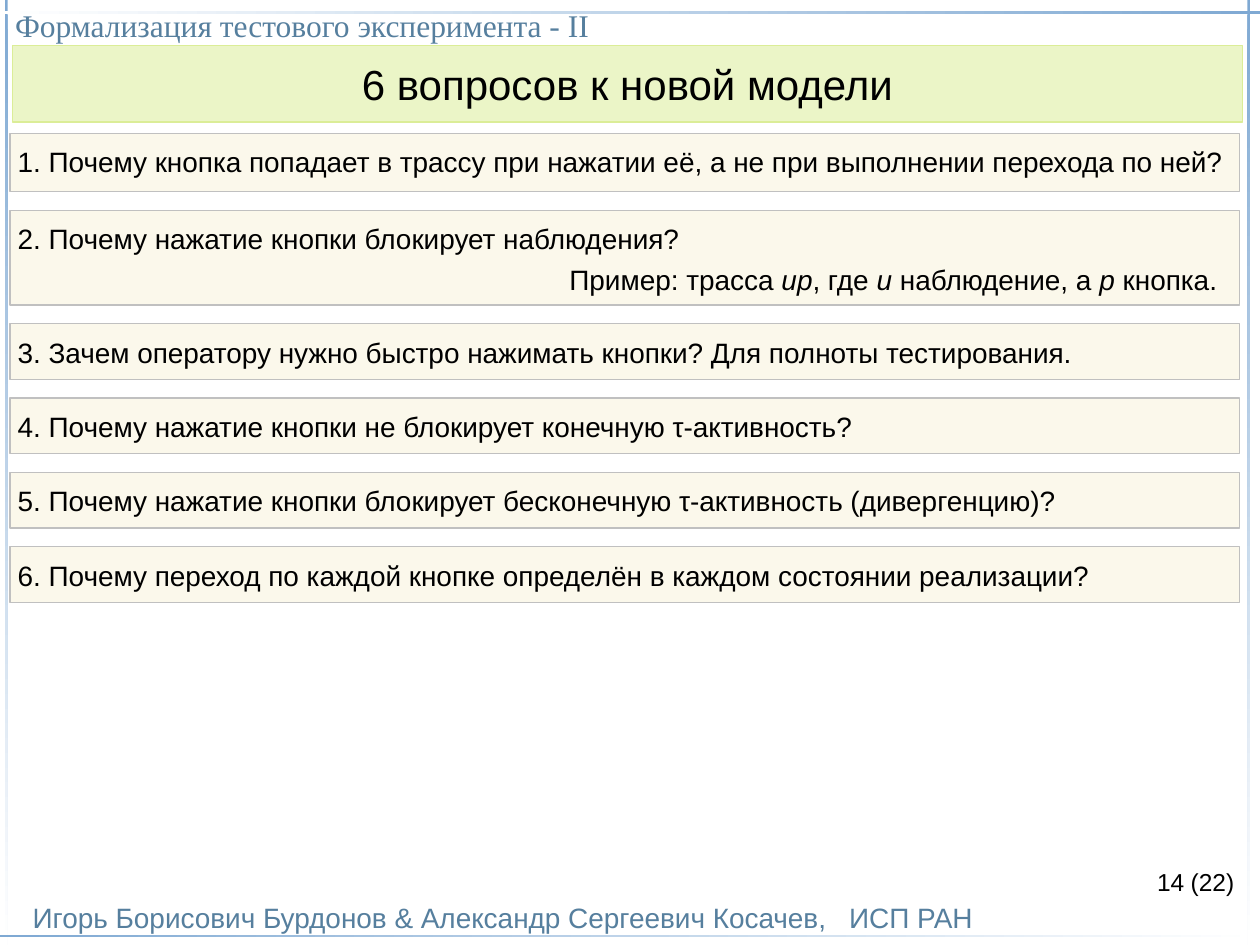
from dataclasses import dataclass

from lxml import etree
from pptx import Presentation
from pptx.dml.color import RGBColor
from pptx.enum.shapes import MSO_SHAPE
from pptx.enum.text import MSO_ANCHOR, PP_ALIGN
from pptx.oxml.ns import qn
from pptx.util import Inches, Pt

RECTANGLE = MSO_SHAPE.RECTANGLE
TOP, MIDDLE, BOTTOM = MSO_ANCHOR.TOP, MSO_ANCHOR.MIDDLE, MSO_ANCHOR.BOTTOM
LEFT, CENTER, RIGHT = PP_ALIGN.LEFT, PP_ALIGN.CENTER, PP_ALIGN.RIGHT

COLORS = {
    "rule": "7FA9D3",
    "white": "FFFFFF",
    "caption": "567F9E",
    "text": "000000",
    "title_fill": "EBF5C7",
    "title_line": "DBED97",
    "question_fill": "FBF8EB",
    "question_line": "C0C0C0",
}
SLIDE_WIDTH, SLIDE_HEIGHT = 10, 7.5
RULE_THICKNESS = 0.02
QUESTION_LEFT, QUESTION_TOP, QUESTION_WIDTH = 0.08, 1.06, 9.76
QUESTION_GAP = 0.15
HANGING_INDENT = 0.33


@dataclass(frozen=True)
class Box:
    left: float
    top: float
    width: float
    height: float


@dataclass(frozen=True)
class Rule:
    box: Box
    angle: int  # counter-clockwise direction of the fade to white


@dataclass(frozen=True)
class Label:
    text: str
    box: Box
    size: int
    color: str = "text"
    font: str = "Arial"
    align: PP_ALIGN = LEFT
    anchor: MSO_ANCHOR = TOP
    tab: float | None = None


@dataclass(frozen=True)
class Question:
    text: str
    height: float = 0.44
    example: tuple[tuple[str, bool], ...] = ()  # (text, italic)
    right_inset: float = 0.06


RULES = [
    Rule(Box(0.04, 0, RULE_THICKNESS, SLIDE_HEIGHT), 270),
    Rule(Box(0, 0.09, SLIDE_WIDTH, RULE_THICKNESS), 180),
    Rule(Box(0, 7.42, SLIDE_WIDTH, RULE_THICKNESS), 0),
    Rule(Box(9.9, 0, RULE_THICKNESS, SLIDE_HEIGHT), 270),
]
LABELS = [
    Label("Игорь Борисович Бурдонов & Александр Сергеевич Косачев,\tИСП РАН",
          Box(0.26, 7.14, 8, 0.27), 16, "caption", anchor=BOTTOM, tab=6.48),
    Label("Формализация тестового эксперимента - II",
          Box(0.12, 0.05, 9.73, 0.3), 18, "caption", "Times New Roman"),
    Label("14", Box(8.9, 6.88, 0.5, 0.24), 14, align=RIGHT),
    Label("(22)", Box(9.45, 6.88, 0.5, 0.24), 14),
]
QUESTIONS = [
    Question("1. Почему кнопка попадает в трассу при нажатии её, "
             "а не при выполнении перехода по ней?", 0.46),
    Question("2. Почему нажатие кнопки блокирует наблюдения?", 0.75,
             (("Пример: трасса ", False), ("up", True), (", где ", False),
              ("u", True), (" наблюдение, а ", False), ("p", True),
              (" кнопка.", False)), 0.18),
    Question("3. Зачем оператору нужно быстро нажимать кнопки? Для полноты тестирования."),
    Question("4. Почему нажатие кнопки не блокирует конечную τ-активность?"),
    Question("5. Почему нажатие кнопки блокирует бесконечную τ-активность (дивергенцию)?"),
    Question("6. Почему переход по каждой кнопке определён в каждом состоянии реализации?"),
]


def rgb(name: str) -> RGBColor:
    return RGBColor.from_string(COLORS[name])


def place(box: Box) -> tuple:
    return tuple(Inches(v) for v in (box.left, box.top, box.width, box.height))


def set_frame(frame, insets: tuple, anchor: MSO_ANCHOR) -> None:
    """Insets run left, top, right, bottom."""
    frame.word_wrap = True
    frame.vertical_anchor = anchor
    (frame.margin_left, frame.margin_top,
     frame.margin_right, frame.margin_bottom) = (Inches(v) for v in insets)


def style(paragraph, size: int, color: str = "text", font: str = "Arial",
          align: PP_ALIGN = LEFT) -> None:
    paragraph.alignment = align
    paragraph.font.size = Pt(size)
    paragraph.font.name = font
    paragraph.font.color.rgb = rgb(color)


def add_rule(slide, rule: Rule) -> None:
    bar = slide.shapes.add_shape(RECTANGLE, *place(rule.box))
    bar.shadow.inherit = False
    bar.line.fill.background()
    bar.fill.gradient()
    bar.fill.gradient_angle = rule.angle
    for stop, color in zip(bar.fill.gradient_stops, ("rule", "white")):
        stop.color.rgb = rgb(color)


def add_label(slide, label: Label) -> None:
    frame = slide.shapes.add_textbox(*place(label.box)).text_frame
    set_frame(frame, (0, 0, 0, 0), label.anchor)
    paragraph = frame.paragraphs[0]
    paragraph.add_run().text = label.text
    if label.tab is not None:
        tabs = etree.SubElement(paragraph._p.get_or_add_pPr(), qn("a:tabLst"))
        etree.SubElement(tabs, qn("a:tab"), pos=str(Inches(label.tab)), algn="l")
    style(paragraph, label.size, label.color, label.font, label.align)


def add_panel(slide, box: Box, kind: str):
    panel = slide.shapes.add_shape(RECTANGLE, *place(box))
    panel.shadow.inherit = False
    panel.fill.solid()
    panel.fill.fore_color.rgb = rgb(f"{kind}_fill")
    panel.line.color.rgb = rgb(f"{kind}_line")
    panel.line.width = Pt(0.75)
    return panel.text_frame


def add_title(slide, text: str) -> None:
    frame = add_panel(slide, Box(0.1, 0.36, 9.76, 0.61), "title")
    set_frame(frame, (0, 0.1, 0, 0.1), MIDDLE)
    frame.text = text
    style(frame.paragraphs[0], 24, align=CENTER)


def add_question(slide, question: Question, top: float) -> None:
    box = Box(QUESTION_LEFT, top, QUESTION_WIDTH, question.height)
    frame = add_panel(slide, box, "question")
    set_frame(frame, (0.06, 0.09, question.right_inset, 0.09), TOP)
    frame.text = question.text
    paragraph = frame.paragraphs[0]
    properties = paragraph._p.get_or_add_pPr()
    properties.set("marL", str(Inches(HANGING_INDENT)))
    properties.set("indent", str(Inches(-HANGING_INDENT)))
    style(paragraph, 16)
    if question.example:
        example = frame.add_paragraph()
        example.space_before = Pt(4)
        for text, italic in question.example:
            run = example.add_run()
            run.text = text
            run.font.italic = italic
        style(example, 16, align=RIGHT)


def main() -> None:
    presentation = Presentation()
    presentation.slide_width = Inches(SLIDE_WIDTH)
    presentation.slide_height = Inches(SLIDE_HEIGHT)
    slide = presentation.slides.add_slide(presentation.slide_layouts[6])

    for rule in RULES:
        add_rule(slide, rule)
    for label in LABELS:
        add_label(slide, label)
    add_title(slide, "6 вопросов к новой модели")
    top = QUESTION_TOP
    for question in QUESTIONS:
        add_question(slide, question, top)
        top += question.height + QUESTION_GAP

    presentation.save("out.pptx")


if __name__ == "__main__":
    main()
